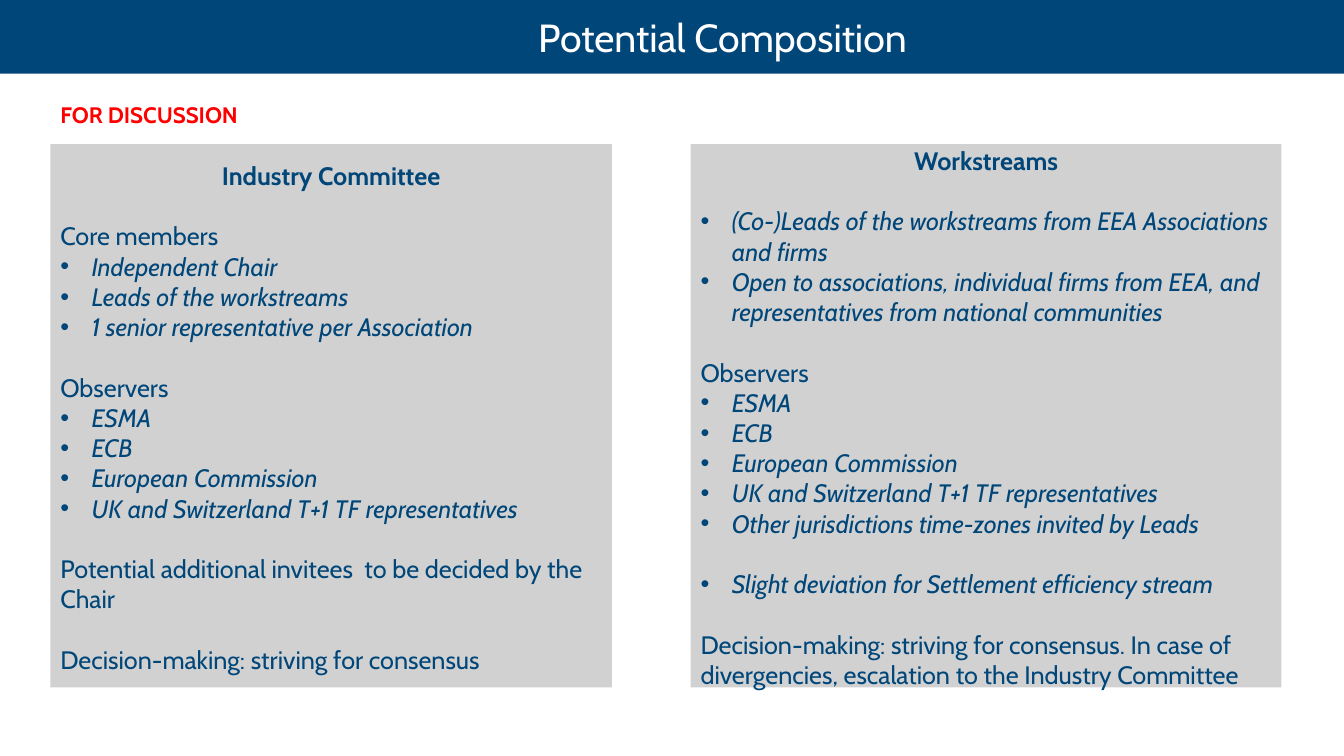
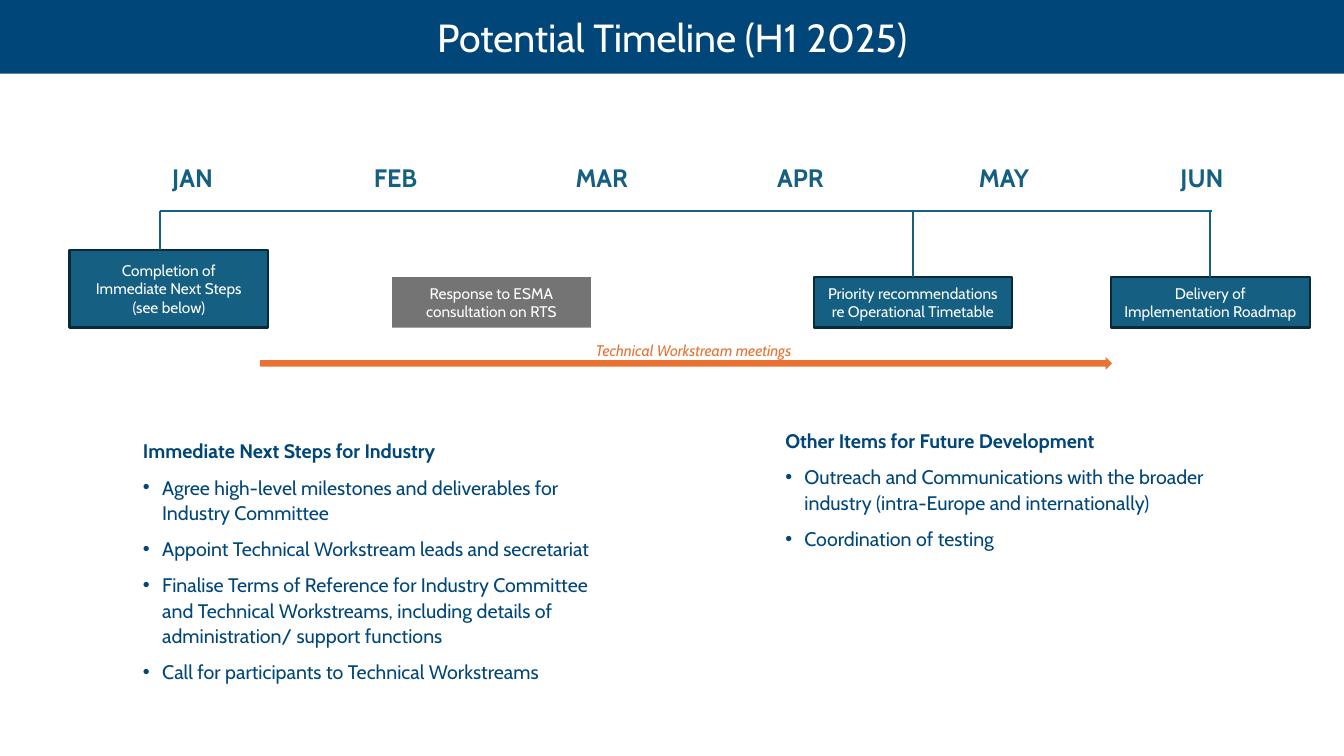
from lxml import etree
from pptx import Presentation
from pptx.dml.color import RGBColor
from pptx.enum.shapes import MSO_CONNECTOR, MSO_SHAPE
from pptx.enum.text import MSO_ANCHOR as Anchor, MSO_AUTO_SIZE, PP_ALIGN as Align
from pptx.oxml.ns import qn
from pptx.util import Inches, Pt

# Shared look
FONT = "Cabin"
NAVY = RGBColor(0x00, 0x46, 0x79)
TEAL = RGBColor(0x15, 0x60, 0x82)
DARK_TEAL = RGBColor(0x09, 0x2A, 0x39)
LIGHT_GREY = RGBColor(0xD1, 0xD1, 0xD1)
GREY = RGBColor(0x74, 0x74, 0x74)
ORANGE = RGBColor(0xE9, 0x71, 0x32)
RED = RGBColor(0xFF, 0x00, 0x00)
WHITE = RGBColor(0xFF, 0xFF, 0xFF)
SLIDE_WIDTH, SLIDE_HEIGHT = 13.33, 7.5
TITLE_ONLY = 5

# Composition content: (label, bullets) groups, set apart by one line
GROUP_GAP = 21.6
OBSERVERS = ["ESMA", "ECB", "European Commission",
             "UK and Switzerland T+1 TF representatives"]
COMMITTEE_GROUPS = [
    ("Core members", ["Independent Chair", "Leads of the workstreams",
                      "1 senior representative per Association"]),
    ("Observers", OBSERVERS),
    ("Potential additional invitees  to be decided by the Chair", []),
    ("Decision-making: striving for consensus", []),
]
WORKSTREAM_GROUPS = [
    (None, ["(Co-)Leads of the workstreams from EEA Associations and firms",
            "Open to associations, individual firms from EEA, and "
            "representatives from national communities"]),
    ("Observers", OBSERVERS + ["Other jurisdictions time-zones invited by Leads"]),
    (None, ["Slight deviation for Settlement efficiency stream"]),
    ("Decision-making: striving for consensus. In case of divergencies, "
     "escalation to the Industry Committee", []),
]

# Timeline content
MONTHS = ["JAN", "FEB", "MAR", "APR", "MAY", "JUN"]
MONTH_LEFT, MONTH_PITCH = 1.61, 2.0
AXIS_Y, AXIS_START = 2.09, 1.59
BOX_WIDTH, BOX_BOTTOM = 1.97, 3.25
NEXT_STEPS = [
    "Agree high-level milestones and deliverables for Industry Committee",
    "Appoint Technical Workstream leads and secretariat",
    "Finalise Terms of Reference for Industry Committee and Technical "
    "Workstreams, including details of administration/ support functions",
    "Call for participants to Technical Workstreams",
]
FUTURE_ITEMS = [
    "Outreach and Communications with the broader industry "
    "(intra-Europe and internationally)",
    "Coordination of testing",
]


def format_paragraph(paragraph, size, color, bold=False, italic=False, align=Align.LEFT):
    paragraph.alignment = align
    for run in paragraph.runs:
        font = run.font
        font.name, font.size = FONT, Pt(size)
        font.bold, font.italic = bold, italic
        font.color.rgb = color


def set_text(frame, text, size, color, **style):
    frame.text = text
    for paragraph in frame.paragraphs:
        format_paragraph(paragraph, size, color, **style)


def add_paragraph(frame, text, size, color, **style):
    paragraph = frame.add_paragraph()
    paragraph.text = text
    format_paragraph(paragraph, size, color, **style)
    return paragraph


def add_bullet(paragraph, indent):
    properties = paragraph._p.get_or_add_pPr()
    properties.set("marL", str(Inches(indent)))
    properties.set("indent", str(-Inches(indent)))
    etree.SubElement(properties, qn("a:buFont")).set("typeface", "Arial")
    etree.SubElement(properties, qn("a:buChar")).set("char", "•")


def add_title_slide(presentation, title, left_margin=0.1):
    slide = presentation.slides.add_slide(presentation.slide_layouts[TITLE_ONLY])
    band = slide.shapes.title
    band.left, band.top = Inches(0), Inches(0)
    band.width, band.height = Inches(SLIDE_WIDTH), Inches(0.73)
    band.fill.solid()
    band.fill.fore_color.rgb = NAVY
    frame = band.text_frame
    frame.auto_size = MSO_AUTO_SIZE.NONE
    frame.vertical_anchor = Anchor.MIDDLE
    frame.margin_left = Inches(left_margin)
    set_text(frame, title, 28, WHITE, align=Align.CENTER)
    return slide


def add_text_box(slide, left, top, width, height, anchor=Anchor.TOP):
    box = slide.shapes.add_textbox(Inches(left), Inches(top), Inches(width), Inches(height))
    frame = box.text_frame
    frame.word_wrap = True
    frame.vertical_anchor = anchor
    return frame


def add_filled_shape(slide, kind, left, top, width, height, fill, outline=None):
    shape = slide.shapes.add_shape(kind, Inches(left), Inches(top), Inches(width), Inches(height))
    shape.shadow.inherit = False
    shape.fill.solid()
    shape.fill.fore_color.rgb = fill
    if outline is None:
        shape.line.fill.background()
    else:
        shape.line.color.rgb = outline
        shape.line.width = Pt(1.5)
    return shape


def add_panel(slide, left, width, margin_top, heading, groups):
    panel = add_filled_shape(slide, MSO_SHAPE.RECTANGLE, left, 1.43, width, 5.39, LIGHT_GREY)
    frame = panel.text_frame
    frame.word_wrap = True
    frame.vertical_anchor = Anchor.TOP
    frame.margin_top = Inches(margin_top)
    set_text(frame, heading, 18, NAVY, bold=True, align=Align.CENTER)
    for label, bullets in groups:
        paragraphs = []
        if label:
            paragraphs.append(add_paragraph(frame, label, 18, NAVY))
        for text in bullets:
            paragraph = add_paragraph(frame, text, 18, NAVY, italic=True)
            add_bullet(paragraph, 0.31)
            paragraphs.append(paragraph)
        paragraphs[0].space_before = Pt(GROUP_GAP)


def add_timeline_box(slide, left, height, text, fill=TEAL, outline=DARK_TEAL):
    box = add_filled_shape(slide, MSO_SHAPE.RECTANGLE, left, BOX_BOTTOM - height,
                           BOX_WIDTH, height, fill, outline)
    frame = box.text_frame
    frame.word_wrap = True
    frame.vertical_anchor = Anchor.MIDDLE
    set_text(frame, text, 11, WHITE, align=Align.CENTER)
    return box


def add_line(slide, start_x, start_y, end_x, end_y, end_box=None):
    line = slide.shapes.add_connector(MSO_CONNECTOR.STRAIGHT, Inches(start_x), Inches(start_y),
                                      Inches(end_x), Inches(end_y))
    line.line.color.rgb = TEAL
    line.line.width = Pt(1.5)
    etree.SubElement(line._element.spPr, qn("a:effectLst"))
    if end_box is not None:
        line.end_connect(end_box, 0)


def add_bullet_list(slide, left, top, anchor, heading, items):
    frame = add_text_box(slide, left, top, 4.7, 2.68, anchor)
    set_text(frame, heading, 14, NAVY, bold=True)
    for text in items:
        add_bullet(add_paragraph(frame, text, 14, NAVY), 0.19)
    for paragraph in frame.paragraphs:
        paragraph.line_spacing = 1.07
        paragraph.space_after = Pt(8)


def build_composition(presentation):
    slide = add_title_slide(presentation, "Potential Composition", left_margin=1.1)
    set_text(add_text_box(slide, 0.5, 0.95, 5.57, 0.4), "FOR DISCUSSION", 16, RED, bold=True)
    add_panel(slide, 0.5, 5.57, 0.16, "Industry Committee", COMMITTEE_GROUPS)
    add_panel(slide, 6.85, 5.86, 0.01, "Workstreams", WORKSTREAM_GROUPS)


def build_timeline(presentation):
    slide = add_title_slide(presentation, "Potential Timeline (H1 2025)")

    # Months and axis
    for index, month in enumerate(MONTHS):
        frame = add_text_box(slide, MONTH_LEFT + index * MONTH_PITCH, 1.43, 1, 0.66,
                             Anchor.MIDDLE)
        set_text(frame, month, 18, TEAL, bold=True)
    add_line(slide, AXIS_START, AXIS_Y, 12.02, AXIS_Y)

    # Milestones
    add_timeline_box(slide, 0.69, 0.77, "Completion of\nImmediate Next Steps\n(see below)")
    add_line(slide, AXIS_START, AXIS_Y, AXIS_START, BOX_BOTTOM - 0.77)
    for left, text in [(8.07, "Priority recommendations\nre Operational Timetable"),
                       (11.02, "Delivery of Implementation Roadmap")]:
        box = add_timeline_box(slide, left, 0.5, text)
        middle = left + BOX_WIDTH / 2
        add_line(slide, middle, AXIS_Y, middle, BOX_BOTTOM - 0.5, box)
    add_timeline_box(slide, 3.89, 0.5, "Response to ESMA consultation on RTS", GREY, None)

    # Meetings arrow
    add_filled_shape(slide, MSO_SHAPE.RIGHT_ARROW, 2.58, 3.54, 8.45, 0.13, ORANGE)
    set_text(add_text_box(slide, 5.81, 3.33, 4.14, 0.29), "Technical Workstream meetings",
             11, ORANGE, italic=True)

    # Lists below the timeline
    add_bullet_list(slide, 1.32, 4.22, Anchor.MIDDLE, "Immediate Next Steps for Industry",
                    NEXT_STEPS)
    add_bullet_list(slide, 7.69, 4.19, Anchor.TOP, "Other Items for Future Development",
                    FUTURE_ITEMS)


def main():
    presentation = Presentation()
    presentation.slide_width = Inches(SLIDE_WIDTH)
    presentation.slide_height = Inches(SLIDE_HEIGHT)
    build_composition(presentation)
    build_timeline(presentation)
    presentation.save("out.pptx")


if __name__ == "__main__":
    main()
